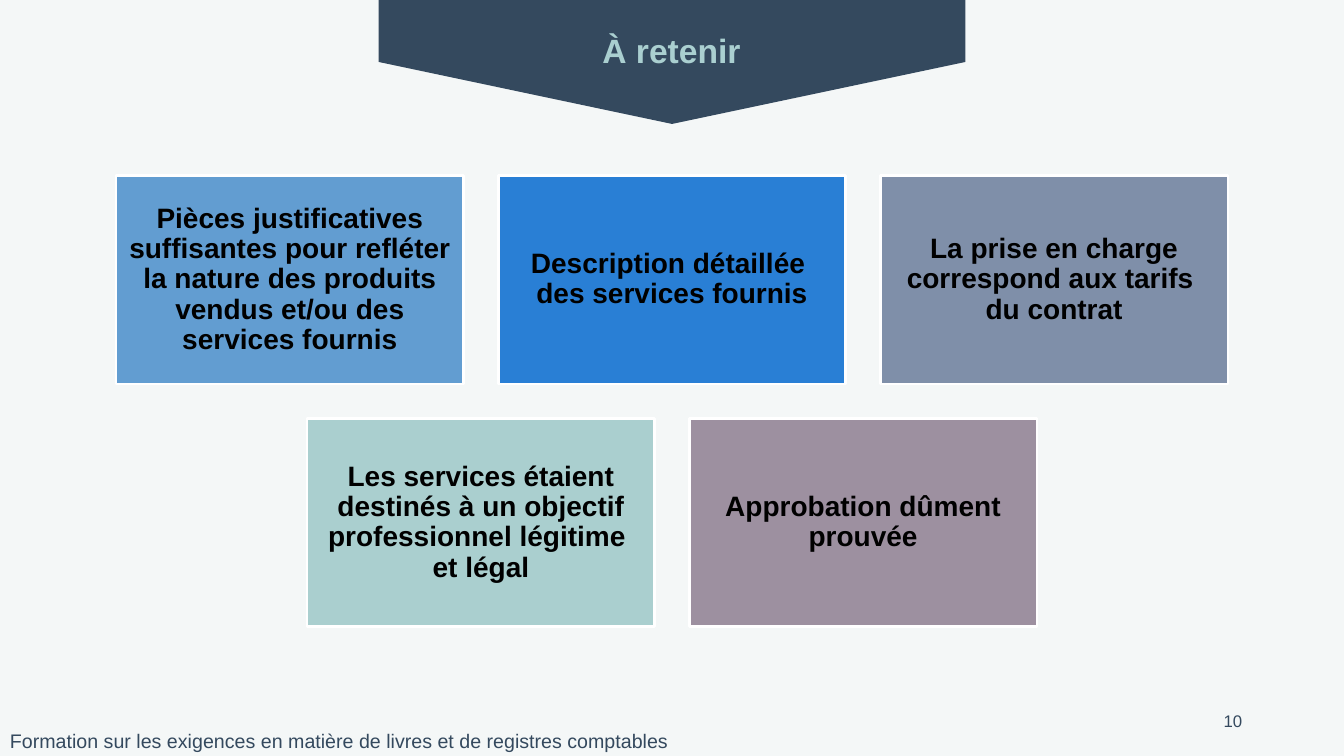
from pptx import Presentation
from pptx.dml.color import RGBColor
from pptx.enum.shapes import MSO_SHAPE
from pptx.enum.text import MSO_ANCHOR, PP_ALIGN
from pptx.util import Inches, Pt

SLIDE_WIDTH, SLIDE_HEIGHT = 13.33, 7.5
NAVY, TEAL, WHITE, BLACK = "34495E", "AACFD0", "FFFFFF", "000000"
BACKGROUND = "F4F7F7"

TITLE = "À retenir"
FOOTER = "Formation sur les exigences en matière de livres et de registres comptables"
PAGE_NUMBER = "10"
CARD_ROWS = [
    [
        ("Pièces justificatives suffisantes pour refléter la nature des produits "
         "vendus et/ou des services fournis", "629DD1"),
        ("Description détaillée \ndes services fournis", "297FD5"),
        ("La prise en charge correspond aux tarifs \ndu contrat", "7F8FA9"),
    ],
    [
        ("Les services étaient destinés à un objectif professionnel légitime \net légal",
         "AACFCF"),
        ("Approbation dûment prouvée", "9D90A0"),
    ],
]
CARD_WIDTH, CARD_HEIGHT, CARD_GAP, CARDS_TOP = 3.45, 2.07, 0.34, 1.74
BANNER_LENGTH, BANNER_WIDTH = 1.23, 5.82


def color(hex_string):
    return RGBColor.from_string(hex_string)


def box(left, top, width, height):
    return [Inches(value) for value in (left, top, width, height)]


def write(shape, text, size, text_color, bold=False, align=PP_ALIGN.LEFT,
          anchor=MSO_ANCHOR.TOP, margins=(0.1, 0.05), line_spacing=None, space_after=0):
    """Fill a shape with one formatted paragraph; a newline is a line break."""
    frame = shape.text_frame
    frame.word_wrap = True
    frame.vertical_anchor = anchor
    frame.margin_left = frame.margin_right = Inches(margins[0])
    frame.margin_top = frame.margin_bottom = Inches(margins[1])
    paragraph = frame.paragraphs[0]
    paragraph.alignment = align
    paragraph.line_spacing = line_spacing
    paragraph.space_after = Pt(space_after)
    for index, line in enumerate(text.split("\n")):
        if index:
            paragraph.add_line_break()
        run = paragraph.add_run()
        run.text = line
        run.font.name = "Arial"
        run.font.size = Pt(size)
        run.font.bold = bold
        run.font.color.rgb = color(text_color)


def add_filled(slide, kind, place, fill):
    shape = slide.shapes.add_shape(kind, *box(*place))
    shape.shadow.inherit = False
    shape.fill.solid()
    shape.fill.fore_color.rgb = color(fill)
    shape.line.fill.background()
    return shape


def add_banner(slide):
    """Put the downward pentagon behind the title, flush with the top edge."""
    left = (SLIDE_WIDTH - BANNER_LENGTH) / 2
    top = (BANNER_LENGTH - BANNER_WIDTH) / 2
    banner = add_filled(slide, MSO_SHAPE.PENTAGON,
                        (left, top, BANNER_LENGTH, BANNER_WIDTH), NAVY)
    banner.rotation = 90
    title = slide.shapes.title
    title.element.addprevious(banner.element)
    title.left, title.top, title.width, title.height = box(2.97, 0.25, 7.38, 0.5)
    write(title, TITLE, 24, TEAL, bold=True, align=PP_ALIGN.CENTER)


def add_cards(slide):
    """Lay out each row of cards centred on the slide."""
    for row, cards in enumerate(CARD_ROWS):
        row_width = len(cards) * (CARD_WIDTH + CARD_GAP) - CARD_GAP
        row_left = (SLIDE_WIDTH - row_width) / 2
        top = CARDS_TOP + row * (CARD_HEIGHT + CARD_GAP)
        for column, (text, fill) in enumerate(cards):
            left = row_left + column * (CARD_WIDTH + CARD_GAP)
            card = add_filled(slide, MSO_SHAPE.RECTANGLE,
                              (left, top, CARD_WIDTH, CARD_HEIGHT), fill)
            card.line.color.rgb = color(WHITE)
            card.line.width = Pt(2)
            write(card, text, 20, BLACK, bold=True, align=PP_ALIGN.CENTER,
                  anchor=MSO_ANCHOR.MIDDLE, margins=(0.08, 0.08),
                  line_spacing=0.9, space_after=7)


def main():
    presentation = Presentation()
    presentation.slide_width = Inches(SLIDE_WIDTH)
    presentation.slide_height = Inches(SLIDE_HEIGHT)
    slide = presentation.slides.add_slide(presentation.slide_layouts[5])
    slide.background.fill.solid()
    slide.background.fill.fore_color.rgb = color(BACKGROUND)

    add_banner(slide)
    add_cards(slide)
    footer = slide.shapes.add_textbox(*box(0, 7.18, 8.42, 0.34))
    write(footer, FOOTER, 14, NAVY)
    page_number = slide.shapes.add_textbox(*box(9.42, 6.95, 3, 0.4))
    write(page_number, PAGE_NUMBER, 12, NAVY, align=PP_ALIGN.RIGHT,
          anchor=MSO_ANCHOR.MIDDLE)
    presentation.save("out.pptx")


if __name__ == "__main__":
    main()
